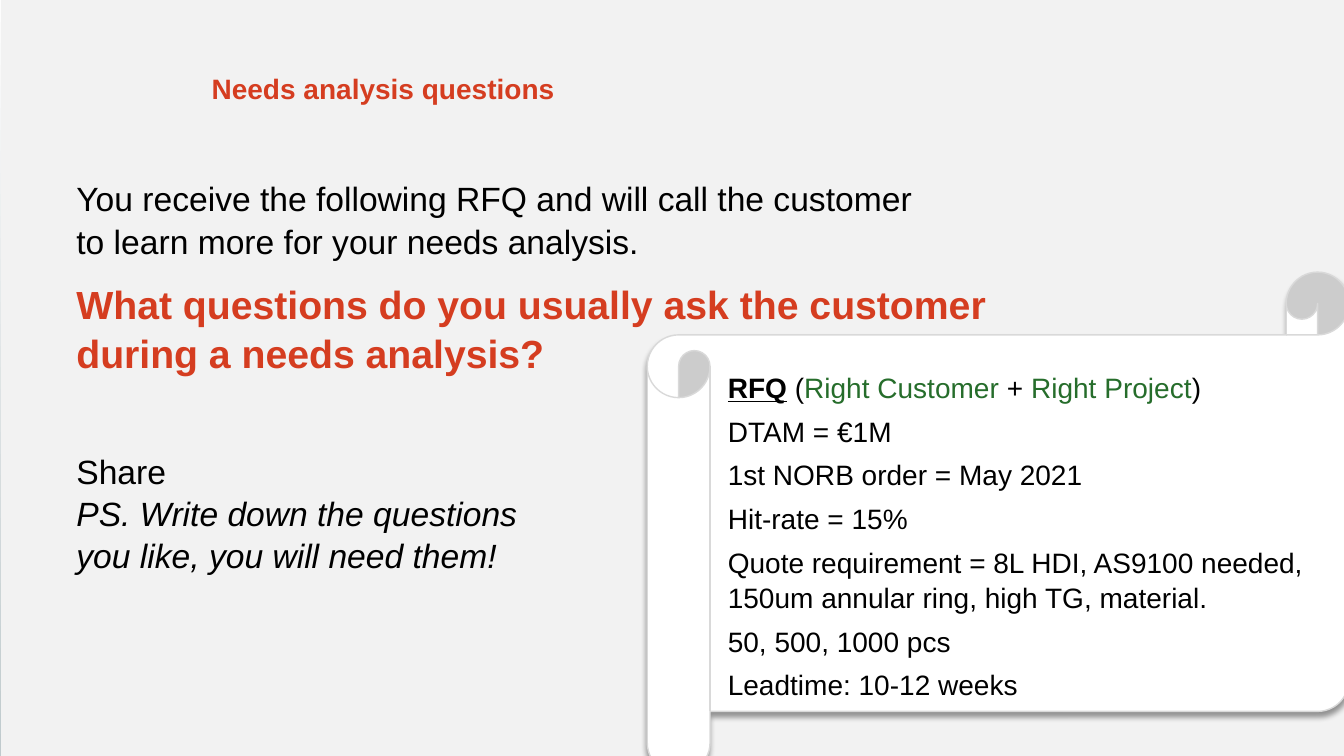
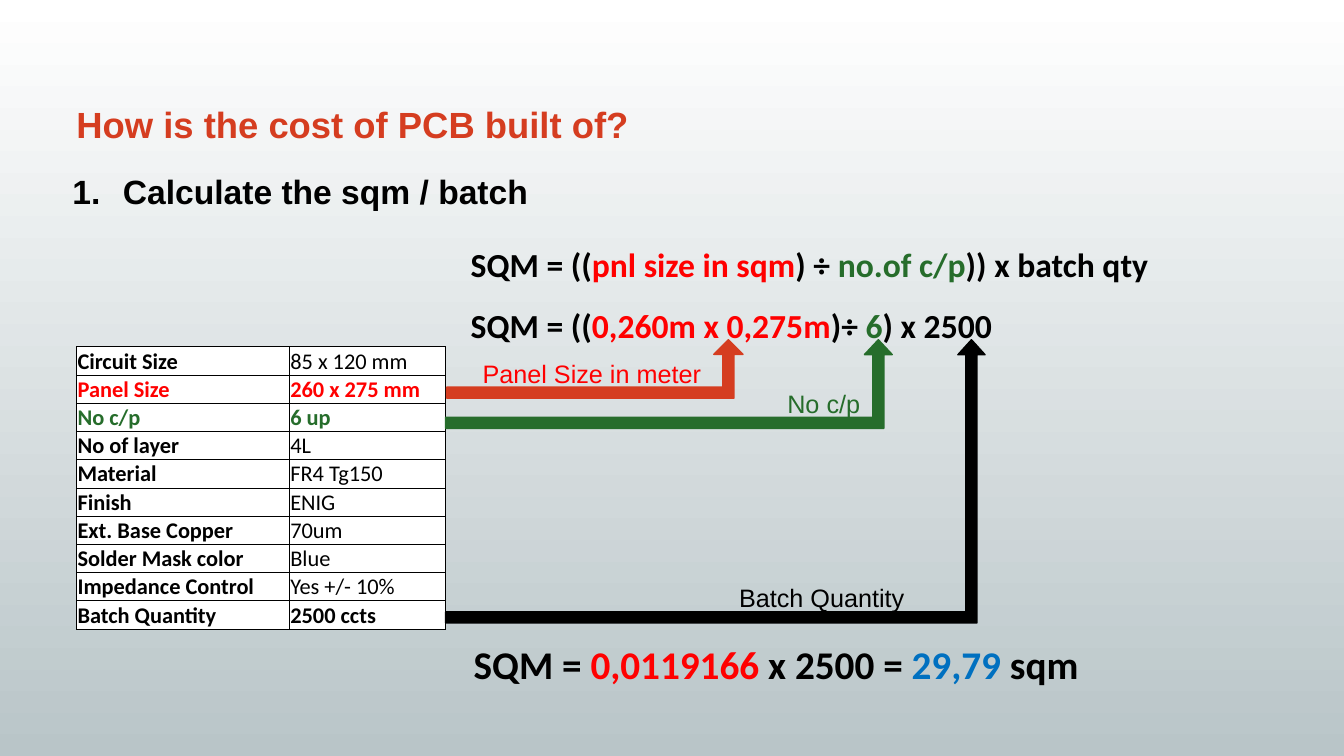
import pptx
import pptx.util
import pptx.dml.color
import pptx.enum.shapes
import pptx.enum.text
import pptx.oxml
import pptx.oxml.ns

Inches, Pt = pptx.util.Inches, pptx.util.Pt
SHAPE = pptx.enum.shapes.MSO_SHAPE
ANCHOR = pptx.enum.text.MSO_ANCHOR
ALIGN = pptx.enum.text.PP_ALIGN
NS = pptx.oxml.ns.nsdecls("a")

COLOURS = {
    "title": "D53D20", "text": "000000", "red": "FF0000", "green": "266D2B",
    "blue": "0070C0", "white": "FFFFFF", "panel": "F2F2F2", "edge": "D9D9D9",
    "mist": "B9C5C8",
}

# A paragraph is (size, runs); a run is (text, colour, style letters b, i, u).
QUESTIONS = [
    (24, [("You receive the following RFQ and will call the customer\n"
           "to learn more for your needs analysis.", "text", "")]),
    (28, [("What questions do you usually ask the customer\n"
           "during a needs analysis?", "title", "b")]),
]
RFQ = [(20, [("RFQ", "text", "bu"), (" (", "text", ""),
             ("Right Customer ", "green", ""), ("+ ", "text", ""),
             ("Right Project", "green", ""), (")", "text", "")])]
RFQ += [(20, [(line, "text", "")]) for line in (
    "DTAM = €1M",
    "1st NORB order = May 2021",
    "Hit-rate = 15%",
    "Quote requirement = 8L HDI, AS9100 needed, 150um annular ring, high TG, material.",
    "50, 500, 1000 pcs",
    "Leadtime: 10-12 weeks",
)]
SHARE = [
    (24, [("Share", "text", "")]),
    (24, [("PS. Write down the questions you like, you will need them!", "text", "i")]),
]

STEP = [(24, [("Calculate the sqm / batch", "text", "b")])]
FORMULAS = [  # left, top, height, size, runs
    (4.57, 2.29, 0.65, 24, [
        ("SQM = ((", "text", "b"), ("pnl size in sqm", "red", "b"), (") ÷ ", "text", "b"),
        ("no.of c/p", "green", "b"), (")) x batch qty", "text", "b")]),
    (4.57, 2.9, 0.65, 24, [
        ("SQM = ((", "text", "b"), ("0,260m x 0,275m", "red", "b"), (")÷ ", "text", "b"),
        ("6", "green", "b"), (") x 2500", "text", "b")]),
    (4.6, 6.21, 0.61, 28, [
        ("SQM = ", "text", "b"), ("0,0119166", "red", "b"), (" x 2500 = ", "text", "b"),
        ("29,79 ", "blue", "b"), ("sqm", "text", "b")]),
]
SPECIFICATION = [  # name, value, colour, value style
    ("Circuit Size", "85 x 120 mm", "text", ""),
    ("Panel Size", "260 x 275 mm", "red", "b"),
    ("No c/p", "6 up", "green", "b"),
    ("No of layer", "4L", "text", ""),
    ("Material", "FR4 Tg150", "text", ""),
    ("Finish", "ENIG", "text", ""),
    ("Ext. Base Copper", "70um", "text", ""),
    ("Solder Mask color", "Blue", "text", ""),
    ("Impedance Control", "Yes +/- 10%", "text", ""),
    ("Batch Quantity", "2500 ccts", "text", "b"),
]
ARROW_TOP = 3.37
ARROWS = [  # left, width, height, adjustments, colour
    (4.43, 2.94, 0.58, (0.188, 0.25, 0.25), "title"),
    (4.42, 4.43, 0.88, (0.126, 0.157, 0.168), "green"),
    (4.42, 5.35, 2.81, (0.039, 0.048, 0.053), "text"),
]
ARROW_LABELS = [  # left, top, text, colour
    (4.6, 3.55, "Panel Size in meter", "red"),
    (6.9, 3.85, "No c/p", "green"),
    (6.88, 5.77, "Batch Quantity", "text"),
]


def rgb(name):
    return pptx.dml.color.RGBColor.from_string(COLOURS[name])


def add_runs(para, size, runs, font):
    for text, colour, style in runs:
        for number, line in enumerate(text.split("\n")):
            if number:
                para.add_line_break()
            span = para.add_run()
            span.text = line
            span.font.name, span.font.size = font, Pt(size)
            span.font.color.rgb = rgb(colour)
            span.font.bold = "b" in style
            span.font.italic = "i" in style
            span.font.underline = "u" in style


def add_text(page, at, paragraphs, font="Arial", spacing=1.05, after=0,
             align=ALIGN.LEFT, anchor=ANCHOR.TOP, numbered=False):
    box = page.shapes.add_textbox(*map(Inches, at))
    frame = box.text_frame
    frame.word_wrap, frame.vertical_anchor = True, anchor
    for number, (size, runs) in enumerate(paragraphs):
        para = frame.add_paragraph() if number else frame.paragraphs[0]
        if numbered:
            props = para._p.get_or_add_pPr()
            props.set("marL", str(Inches(0.5)))
            props.set("indent", str(-Inches(0.5)))
            props.append(pptx.oxml.parse_xml(f'<a:buAutoNum {NS} type="arabicPeriod"/>'))
        para.line_spacing, para.space_after, para.alignment = spacing, Pt(after), align
        add_runs(para, size, runs, font)


def add_title(page, at, text, size, anchor=ANCHOR.TOP):
    add_text(page, at, [(size, [(text, "title", "b")])], anchor=anchor)


def add_solid(page, kind, at, fill, line=None):
    shape = page.shapes.add_shape(kind, *map(Inches, at))
    shape.fill.solid()
    shape.fill.fore_color.rgb = rgb(fill)
    if line:
        shape.line.color.rgb = rgb(line)
        shape.line.width = Pt(1)
    else:
        shape.line.fill.background()
    shape.shadow.inherit = False
    return shape


def drop_shadow(shape):
    effects = shape._element.spPr.find(pptx.oxml.ns.qn("a:effectLst"))
    effects.append(pptx.oxml.parse_xml(
        f'<a:outerShdw {NS} blurRad="{Pt(4)}" dist="{Pt(3)}" dir="5400000" rotWithShape="0">'
        '<a:srgbClr val="000000"><a:alpha val="40000"/></a:srgbClr></a:outerShdw>'))


def border_cell(cell):
    props = cell._tc.get_or_add_tcPr()
    for place, side in enumerate("LRTB"):
        props.insert(place, pptx.oxml.parse_xml(
            f'<a:ln{side} {NS} w="{Pt(0.5)}"><a:solidFill>'
            f'<a:srgbClr val="{COLOURS["text"]}"/></a:solidFill></a:ln{side}>'))


def add_specification(page):
    widths, row_height = (2.11, 1.55), 0.28
    frame = page.shapes.add_table(
        len(SPECIFICATION), len(widths), Inches(0.76), Inches(3.44),
        Inches(sum(widths)), Inches(row_height * len(SPECIFICATION)))
    table = frame.table
    table.first_row = table.horz_banding = False
    for column, width in zip(table.columns, widths):
        column.width = Inches(width)
    for row, (name, value, colour, style) in enumerate(SPECIFICATION):
        table.rows[row].height = Inches(row_height)
        for column, run in enumerate([(name, colour, "b"), (value, colour, style)]):
            cell = table.cell(row, column)
            cell.margin_left = cell.margin_right = cell.margin_top = Inches(0.01)
            cell.margin_bottom = 0
            cell.vertical_anchor = ANCHOR.BOTTOM
            cell.fill.solid()
            cell.fill.fore_color.rgb = rgb("white")
            border_cell(cell)
            add_runs(cell.text_frame.paragraphs[0], 16, [run], "Calibri")


def set_backdrop(deck):
    fill = deck.slide_master.background.fill
    fill.gradient()
    fill.gradient_angle = 90
    for stop, colour, position in zip(fill.gradient_stops, ("mist", "white"), (0, 1)):
        stop.color.rgb = rgb(colour)
        stop.position = position


def build_questions(page):
    add_solid(page, SHAPE.RECTANGLE, (0.01, -0.1, 13.57, 7.6), "panel")
    add_title(page, (2, 0.52, 10.68, 0.69), "Needs analysis questions", 20, ANCHOR.MIDDLE)
    add_text(page, (0.66, 1.7, 11.73, 4.99), QUESTIONS, after=12)
    drop_shadow(add_solid(page, SHAPE.HORIZONTAL_SCROLL, (6.42, 2.7, 6.96, 4.98),
                          "white", "edge"))
    add_text(page, (7.12, 3.61, 6.21, 3.3), RFQ, after=6)
    add_text(page, (0.66, 4.4, 5.13, 1.31), SHARE)


def build_cost(page):
    add_title(page, (0.66, 0.94, 12.02, 0.91), "How is the cost of PCB built of?", 26)
    add_specification(page)
    for left, width, height, adjustments, colour in ARROWS:
        arrow = add_solid(page, SHAPE.BENT_UP_ARROW, (left, ARROW_TOP, width, height),
                          colour, colour)
        for number, value in enumerate(adjustments):
            arrow.adjustments[number] = value
    for left, top, text, colour in ARROW_LABELS:
        add_text(page, (left, top, 2.54, 0.29), [(18, [(text, colour, "")])],
                 align=ALIGN.CENTER, anchor=ANCHOR.MIDDLE)
    add_text(page, (0.62, 1.57, 5.06, 0.75), STEP, spacing=1.2, after=12, numbered=True)
    for left, top, height, size, runs in FORMULAS:
        add_text(page, (left, top, 7.21, height), [(size, runs)], "Calibri", 1.2, 12)


def main():
    deck = pptx.Presentation()
    deck.slide_width, deck.slide_height = Inches(13.33), Inches(7.5)
    set_backdrop(deck)
    for build in (build_questions, build_cost):
        build(deck.slides.add_slide(deck.slide_layouts[6]))
    deck.save("out.pptx")


if __name__ == "__main__":
    main()
